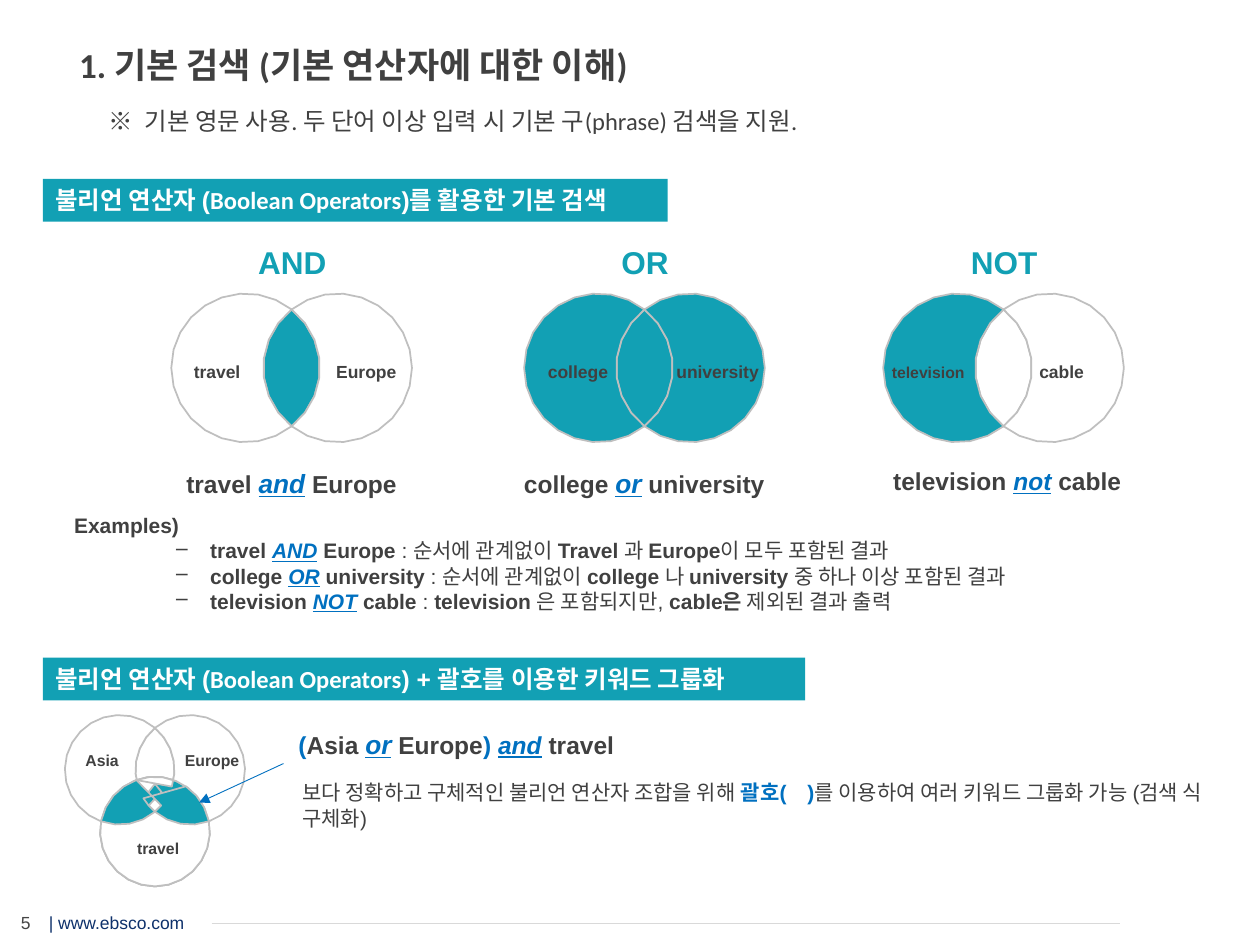
import math

import pptx
import pptx.dml.color
import pptx.enum.shapes
import pptx.enum.text
import pptx.oxml
import pptx.oxml.ns
import pptx.util

Inches = pptx.util.Inches
Pt = pptx.util.Pt
RGBColor = pptx.dml.color.RGBColor
ALIGN = pptx.enum.text.PP_ALIGN
ANCHOR = pptx.enum.text.MSO_ANCHOR

TEAL = RGBColor(0x12, 0xA0, 0xB4)
BLUE = RGBColor(0x00, 0x70, 0xC0)
NAVY = RGBColor(0x0E, 0x31, 0x6B)
DARK = RGBColor(0x40, 0x40, 0x40)
NUMBER_GRAY = RGBColor(0x45, 0x45, 0x45)
OUTLINE = RGBColor(0xBF, 0xBF, 0xBF)
RULE = RGBColor(0xD9, 0xD9, 0xD9)
WHITE = RGBColor(0xFF, 0xFF, 0xFF)

BOLD = {"bold": True}
ACCENT = {"bold": True, "color": BLUE}
OPERATOR = {"bold": True, "italic": True, "underline": True, "color": BLUE}
BIG_OPERATOR = {**OPERATOR, "size": 15}


def meet(first, second, radius):
    """Return both crossing points of two circles of equal radius."""
    dx, dy = second[0] - first[0], second[1] - first[1]
    reach = math.sqrt(radius ** 2 / (dx ** 2 + dy ** 2) - 0.25)
    x, y = (first[0] + second[0]) / 2, (first[1] + second[1]) / 2
    return (x + reach * dy, y - reach * dx), (x - reach * dy, y + reach * dx)


def arc(center, radius, start, end, clockwise):
    """Return points along a circle after start, up to end, at most 15 degrees apart."""
    begin, finish = (math.atan2(y - center[1], x - center[0]) for x, y in (start, end))
    sweep = (finish - begin) % math.tau
    if not clockwise:
        sweep -= math.tau
    steps = math.ceil(abs(sweep) / math.radians(15))
    angles = [begin + sweep * step / steps for step in range(1, steps + 1)]
    return [(center[0] + radius * math.cos(a), center[1] + radius * math.sin(a)) for a in angles]


class SlideBuilder:
    def __init__(self, slide, font="Arial", color=DARK):
        self.slide, self.font, self.color = slide, font, color

    def add_spans(self, para, spans, size, **base):
        for text, style in spans:
            style = {"size": size, "font": self.font, "color": self.color, **base, **style}
            span = para.add_run()
            span.text = text
            span.font.name = style["font"]
            span.font.size = Pt(style["size"])
            span.font.color.rgb = style["color"]
            for effect in ("bold", "italic", "underline"):
                if style.get(effect):
                    setattr(span.font, effect, True)

    def indent(self, para, margin, first, bullet=None):
        properties = para._p.get_or_add_pPr()
        properties.set("marL", str(Inches(margin)))
        properties.set("indent", str(Inches(first)))
        if bullet:
            mark = pptx.oxml.parse_xml(f'<a:buChar {pptx.oxml.ns.nsdecls("a")} char="{bullet}"/>')
            properties.append(mark)

    def text(self, left, top, width, height, spans, size, wrap=True, align=ALIGN.LEFT, **base):
        box = self.slide.shapes.add_textbox(*map(Inches, (left, top, width, height)))
        box.text_frame.word_wrap = wrap
        para = box.text_frame.paragraphs[0]
        para.alignment = align
        if isinstance(spans, str):
            spans = [(spans, {})]
        self.add_spans(para, spans, size, **base)
        return box

    def banner(self, top, width, ending):
        box = self.slide.shapes.add_shape(
            pptx.enum.shapes.MSO_SHAPE.RECTANGLE, *map(Inches, (0.34, top, width, 0.34)))
        box.shadow.inherit = False
        box.fill.solid()
        box.fill.fore_color.rgb = TEAL
        box.line.fill.background()
        box.text_frame.word_wrap = False
        box.text_frame.vertical_anchor = ANCHOR.TOP
        para = box.text_frame.paragraphs[0]
        para.alignment = ALIGN.LEFT
        spans = [("불리언 연산자 (", {}), ("Boolean Operators", {"font": "Calibri"}), (ending, {})]
        self.add_spans(para, spans, 14, bold=True, color=WHITE)

    def region(self, radius, fill, *arcs):
        """Draw an area bounded by (center, start, end, clockwise) arcs."""
        points = [point for center, start, end, clockwise in arcs
                  for point in arc(center, radius, start, end, clockwise)]
        points = [(Inches(x), Inches(y)) for x, y in points]
        builder = self.slide.shapes.build_freeform(*points[0])
        builder.add_line_segments(points[1:])
        shape = builder.convert_to_shape()
        shape.shadow.inherit = False
        shape.fill.solid()
        shape.fill.fore_color.rgb = fill
        shape.line.color.rgb = OUTLINE
        shape.line.width = Pt(1)

    def venn_pair(self, middle, left_fill, lens_fill, right_fill):
        radius, offset, y = 0.59, 0.365, 2.92
        left, right = (middle - offset, y), (middle + offset, y)
        top, bottom = meet(left, right, radius)
        self.region(radius, lens_fill, (left, top, bottom, True), (right, bottom, top, True))
        self.region(radius, left_fill, (left, bottom, top, True), (right, top, bottom, False))
        self.region(radius, right_fill, (right, top, bottom, True), (left, bottom, top, False))

    def venn_triple(self):
        radius = 0.435
        asia, europe, travel = (0.95, 6.11), (1.51, 6.11), (1.23, 6.6)
        top, low = meet(asia, europe, radius)
        inner_left, outer_left = meet(asia, travel, radius)
        outer_right, inner_right = meet(europe, travel, radius)
        areas = [
            (WHITE, (asia, top, inner_right, True), (travel, inner_right, inner_left, False),
             (europe, inner_left, top, True)),
            (TEAL, (europe, inner_left, low, False), (asia, low, outer_left, True),
             (travel, outer_left, inner_left, True)),
            (TEAL, (travel, inner_right, outer_right, True), (europe, outer_right, low, True),
             (asia, low, inner_right, False)),
            (WHITE, (asia, outer_left, top, True), (europe, top, inner_left, False),
             (travel, inner_left, outer_left, False)),
            (WHITE, (europe, top, outer_right, True), (travel, outer_right, inner_right, False),
             (asia, inner_right, top, False)),
            (TEAL, (travel, inner_left, inner_right, True), (asia, inner_right, low, True),
             (europe, low, inner_left, True)),
            (WHITE, (europe, low, outer_right, False), (travel, outer_right, outer_left, True),
             (asia, outer_left, low, False)),
        ]
        for fill, *arcs in areas:
            self.region(radius, fill, *arcs)

    def line(self, start, end, color, width, arrow=False):
        line = self.slide.shapes.add_connector(
            pptx.enum.shapes.MSO_CONNECTOR.STRAIGHT, *map(Inches, (*start, *end)))
        line.line.color.rgb = color
        line.line.width = Pt(width)
        namespace = pptx.oxml.ns.nsdecls("a")
        if arrow:
            head = pptx.oxml.parse_xml(f'<a:tailEnd {namespace} type="triangle"/>')
            line.line._get_or_add_ln().append(head)
        line._element.spPr.append(pptx.oxml.parse_xml(f"<a:effectLst {namespace}/>"))


def main():
    deck = pptx.Presentation()
    deck.slide_width, deck.slide_height = Inches(10), Inches(7.5)
    page = SlideBuilder(deck.slides.add_slide(deck.slide_layouts[6]))

    page.text(0.29, 7.19, 1.94, 0.27, "| www.ebsco.com", 10, color=NAVY)
    number = page.text(-0.04, 7.19, 0.49, 0.27, "5", 10, align=ALIGN.CENTER, color=NUMBER_GRAY)
    number.text_frame.vertical_anchor = ANCHOR.MIDDLE
    page.line((1.68, 7.33), (8.89, 7.33), RULE, 1)

    title = page.text(0.15, 0.3, 7.08, 0.44, "1. 기본 검색 (기본 연산자에 대한 이해)", 20,
                      font="Calibri", bold=True)
    page.indent(title.text_frame.paragraphs[0], 0.76, -0.38)
    note = page.text(0.38, 0.79, 7.05, 0.34,
                     "※\t기본 영문 사용. 두 단어 이상 입력 시 기본 구(phrase) 검색을 지원.", 14,
                     font="Calibri")
    page.indent(note.text_frame.paragraphs[0], 0.67, -0.29)

    page.banner(1.42, 4.96, ")를 활용한 기본 검색")
    for heading, middle, fills in [("AND", 2.315, (WHITE, TEAL, WHITE)),
                                   ("OR", 5.115, (TEAL, TEAL, TEAL)),
                                   ("NOT", 7.965, (TEAL, WHITE, WHITE))]:
        page.text(middle - 0.41, 1.88, 0.83, 0.4, heading, 18, align=ALIGN.CENTER,
                  bold=True, color=TEAL)
        page.venn_pair(middle, *fills)
    for left, width, word in [(1.44, 0.57, "travel"), (2.57, 0.68, "Europe"),
                              (4.25, 0.68, "college"), (5.27, 0.86, "university"),
                              (8.15, 0.56, "cable")]:
        page.text(left, 2.82, width, 0.27, word, 10, wrap=False, bold=True)
    page.text(6.98, 2.83, 0.78, 0.25, "television", 9, wrap=False, bold=True)

    for left, top, width, first, operator, second, style in [
            (1.38, 3.66, 1.88, "travel ", "and", " Europe", BIG_OPERATOR),
            (4.06, 3.66, 2.12, "college ", "or", " university", BIG_OPERATOR),
            (6.99, 3.65, 2.02, "television ", "not", " cable", OPERATOR)]:
        page.text(left, top, width, 0.35, [(first, {}), (operator, style), (second, {})], 14,
                  wrap=False, bold=True)

    examples = page.text(0.49, 4.02, 8.97, 0.91, "Examples)", 12, bold=True)
    for spans in [
            [("travel ", BOLD), ("AND", OPERATOR), (" Europe", BOLD),
             (" : 순서에 관계없이 ", {}), ("Travel ", BOLD), ("과 ", {}), ("Europe", BOLD),
             ("이 모두 포함된 결과", {})],
            [("college ", BOLD), ("OR", OPERATOR), (" university ", BOLD),
             (": 순서에 관계없이 ", {}), ("college ", BOLD), ("나 ", {}), ("university ", BOLD),
             ("중 하나 이상 포함된 결과", {})],
            [("television ", BOLD), ("NOT", OPERATOR), (" cable ", BOLD), (": ", {}),
             ("television ", BOLD), ("은 포함되지만, ", {}), ("cable은", BOLD),
             (" 제외된 결과 출력", {})]]:
        para = examples.text_frame.add_paragraph()
        para.level = 1
        page.indent(para, 1.08, -0.27, "–")
        page.add_spans(para, spans, 12)

    page.banner(5.22, 6.05, ") + 괄호를 이용한 키워드 그룹화")
    page.venn_triple()
    for left, top, width, word in [(0.99, 6.61, 0.54, "travel"), (1.37, 5.91, 0.64, "Europe"),
                                   (0.58, 5.91, 0.47, "Asia")]:
        page.text(left, top, width, 0.25, word, 9, wrap=False, bold=True)
    page.text(2.27, 5.73, 2.72, 0.35,
              [("(", ACCENT), ("Asia ", {}), ("or", BIG_OPERATOR), (" Europe", {}),
               (") ", ACCENT), ("and", OPERATOR), (" travel", {})], 14, wrap=False, bold=True)
    page.line((2.25, 6.06), (1.58, 6.37), BLUE, 0.5, arrow=True)
    page.text(2.3, 6.14, 7.49, 0.51,
              [("보다 정확하고 구체적인 불리언 연산자 조합을 위해 ", {}), ("괄호(　)", ACCENT),
               ("를 이용하여 여러 키워드 그룹화 가능 (검색 식 구체화)", {})], 12)

    deck.save("out.pptx")


if __name__ == "__main__":
    main()
